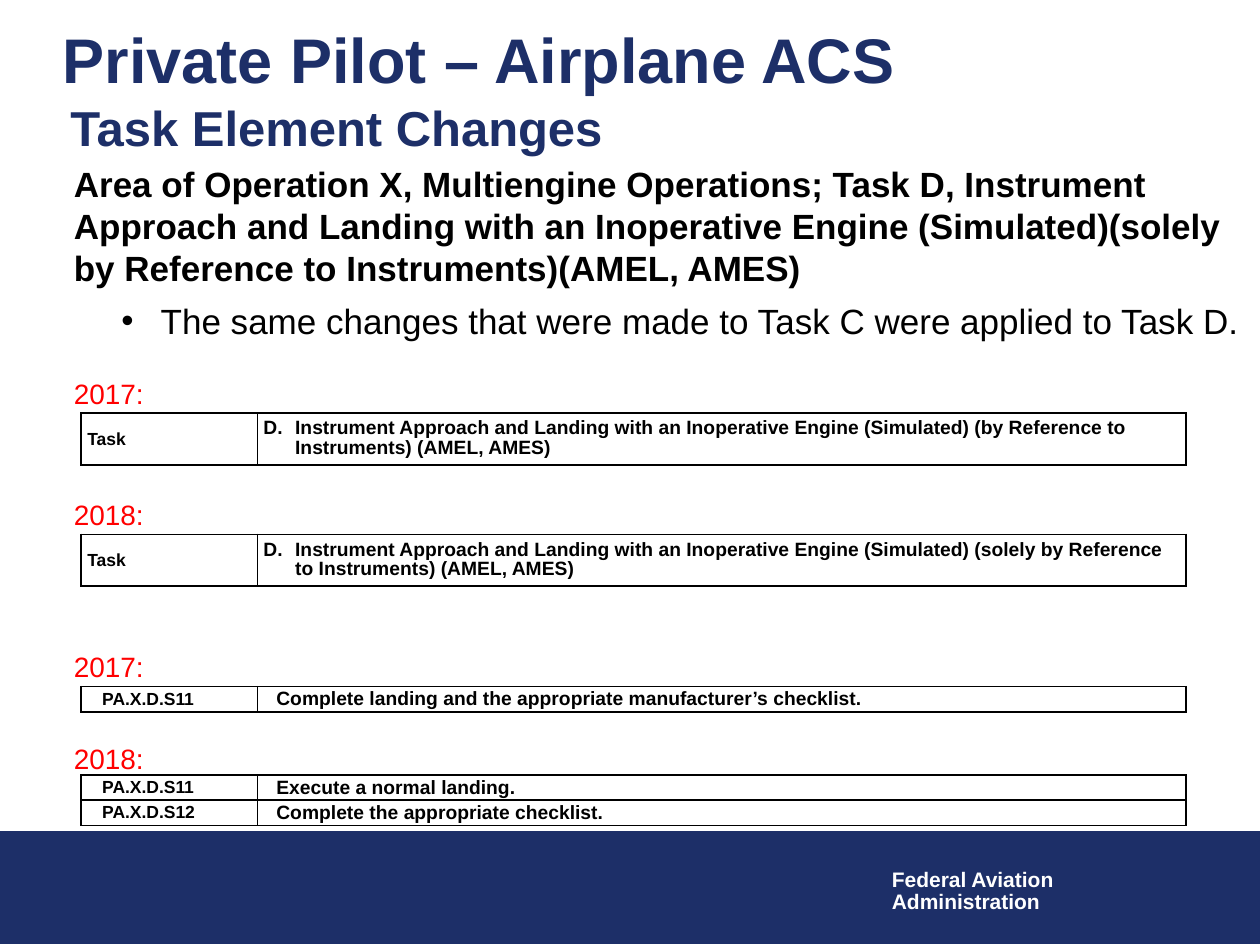
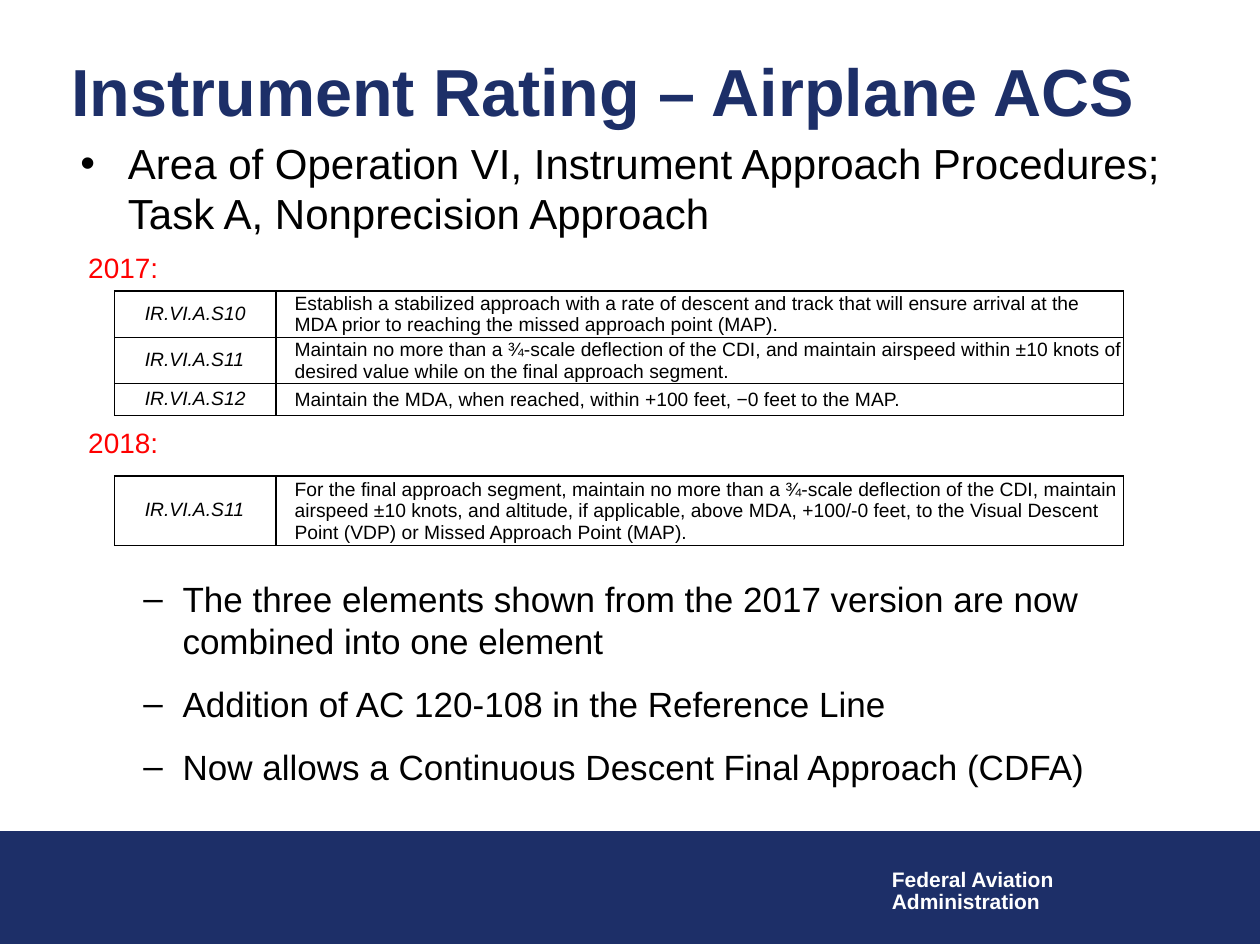
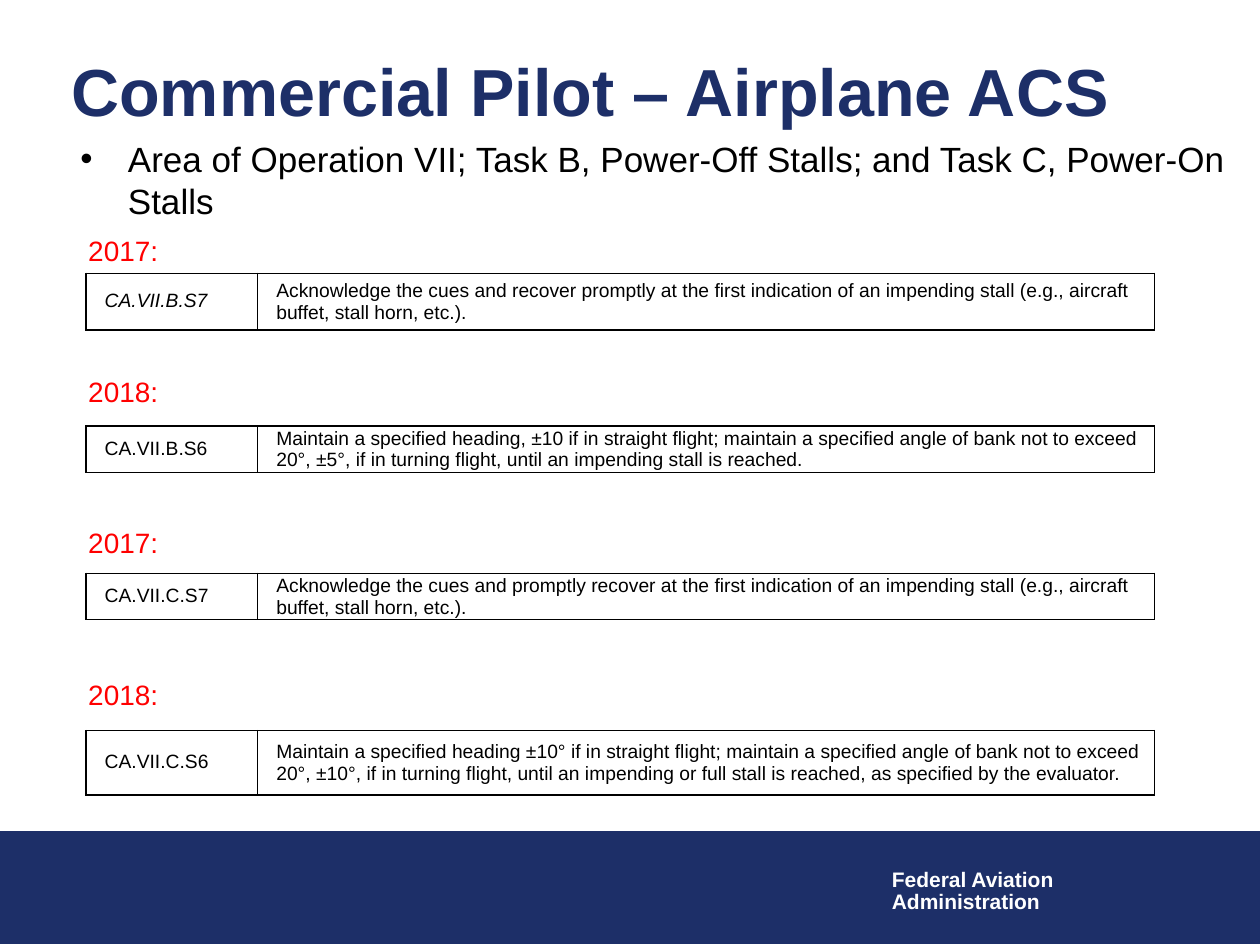
import pptx
import pptx.dml.color
import pptx.enum.shapes
import pptx.enum.text
import pptx.oxml
import pptx.oxml.ns
import pptx.util

Cm = pptx.util.Cm
Pt = pptx.util.Pt
FONT = "Arial"
HUES = {"navy": "1D2F68", "red": "FF0000", "black": "000000", "white": "FFFFFF"}
LEAD = 1.2
INSET = 0.13
NS = pptx.oxml.ns.nsdecls("a")


def color(name):
    return pptx.dml.color.RGBColor.from_string(HUES[name])


def style(para, size, hue="black", bold=False, italic=False):
    for run in para.runs:
        font = run.font
        font.name = FONT
        font.size = Pt(size)
        font.bold = bold
        font.italic = italic
        font.color.rgb = color(hue)


def indent(para, left, first=0):
    props = para._p.get_or_add_pPr()
    props.set("marL", str(Cm(left)))
    props.set("indent", str(Cm(first)))
    return props


def add_text(slide, box, lines, size, hue="black", bold=False, lead=LEAD,
             inset=(0.25, INSET), middle=False, wrap=True):
    shape = slide.shapes.add_textbox(*[Cm(side) for side in box])
    frame = shape.text_frame
    frame.word_wrap = wrap
    frame.margin_left = frame.margin_right = Cm(inset[0])
    frame.margin_top = frame.margin_bottom = Cm(inset[1])
    if middle:
        frame.vertical_anchor = pptx.enum.text.MSO_ANCHOR.MIDDLE
    frame.text = "\n".join(lines)
    for para in frame.paragraphs:
        para.line_spacing = Pt(round(size * lead, 1))
        style(para, size, hue, bold)
    return frame.paragraphs


def add_mark(para, mark, left, hang):
    props = indent(para, left, -hang)
    props.append(pptx.oxml.parse_xml(f'<a:buFont {NS} typeface="{FONT}"/>'))
    props.append(pptx.oxml.parse_xml(f'<a:buChar {NS} char="{mark}"/>'))


def add_frame(deck, title, box, size):
    slide = deck.slides.add_slide(deck.slide_layouts[6])
    band = slide.shapes.add_shape(pptx.enum.shapes.MSO_SHAPE.RECTANGLE,
                                  0, Cm(16.76), deck.slide_width, Cm(2.26))
    band.shadow.inherit = False
    band.fill.solid()
    band.fill.fore_color.rgb = color("navy")
    band.line.color.rgb = color("navy")
    band.line.width = Pt(0.75)
    add_text(slide, (17.73, 17.4, 3.81, 1.12),
             ["Federal Aviation", "Administration"], 12, "white", True,
             lead=1.04, wrap=False)
    add_text(slide, box, [title], size, "navy", True, middle=True)
    return slide


def add_years(slide, left, tops):
    for spot, top in enumerate(tops):
        add_text(slide, (left, top, 2.5, 0.7), [("2017:", "2018:")[spot % 2]],
                 16, "red", inset=(0, 0))


def add_edges(cell):
    props = cell._tc.get_or_add_tcPr()
    for side in "LRTB":
        props.append(pptx.oxml.parse_xml(
            f'<a:ln{side} {NS} w="{Pt(1)}"><a:solidFill>'
            f'<a:srgbClr val="{HUES["black"]}"/></a:solidFill></a:ln{side}>'))


def fill_cell(cell, text):
    add_edges(cell)
    cell.fill.solid()
    cell.fill.fore_color.rgb = color("white")
    cell.margin_left = cell.margin_right = 0
    cell.margin_top = cell.margin_bottom = 0
    cell.vertical_anchor = pptx.enum.text.MSO_ANCHOR.MIDDLE
    cell.text_frame.text = text
    return cell.text_frame.paragraphs[0]


def add_grid(slide, spot, widths, heights, rows, pad=0.38, size=11,
             bold=False, italic=False):
    shape = slide.shapes.add_table(len(rows), 2, Cm(spot[0]), Cm(spot[1]),
                                   Cm(sum(widths)), Cm(sum(heights)))
    grid = shape.table
    grid.first_row = grid.horz_banding = False
    for column, width in zip(grid.columns, widths):
        column.width = Cm(width)
    for index, (row, height) in enumerate(zip(rows, heights)):
        grid.rows[index].height = Cm(height)
        code = fill_cell(grid.cell(index, 0), row[0])
        code.line_spacing = Pt(11.2)
        indent(code, pad)
        style(code, size, bold=bold, italic=italic)
        para = fill_cell(grid.cell(index, 1), row[1])
        if "\t" in row[1]:
            para.line_spacing = Pt(11.3)
            props = indent(para, 0.76, -0.64)
            props.append(pptx.oxml.parse_xml(
                f'<a:tabLst {NS}><a:tab pos="{Cm(0.76)}" algn="l"/></a:tabLst>'))
        else:
            para.space_after = Pt(1)
            indent(para, 0.38)
        style(para, 11, bold=bold)


def add_lead(slide, text, size):
    para = add_text(slide, (1.37, 2.64, 23.83, 2.4), [text], size)[0]
    add_mark(para, "•", 0.96, 0.96)


def add_private(deck):
    slide = add_frame(deck, "Private Pilot – Airplane ACS",
                      (1.02, 0.38, 22.86, 1.6), 36)
    add_text(slide, (1.17, 1.83, 23.42, 1.45), ["Task Element Changes"],
             28, "navy", True)
    head, note = add_text(slide, (1.24, 3.15, 24.13, 4), [
        "Area of Operation X, Multiengine Operations; Task D, Instrument "
        "Approach and Landing with an Inoperative Engine (Simulated)(solely "
        "by Reference to Instruments)(AMEL, AMES)",
        "The same changes that were made to Task C were applied to Task D."], 20)
    style(head, 20, bold=True)
    head.space_after = Pt(6)
    add_mark(note, "•", 1.75, 0.79)
    add_years(slide, 1.49, (7.59, 10.03, 13.1, 14.95))
    widths = (3.56, 18.72)
    task = ("D.\tInstrument Approach and Landing with an Inoperative Engine "
            "(Simulated) ({}by Reference to Instruments) (AMEL, AMES)")
    for top, extra in ((8.33, ""), (10.77, "solely ")):
        add_grid(slide, (1.63, top), widths, [1.04],
                 [("Task", task.format(extra))], 0.13, 10, True)
    for top, rows in (
            (13.84, [("PA.X.D.S11", "Complete landing and the appropriate "
                                    "manufacturer’s checklist.")]),
            (15.62, [("PA.X.D.S11", "Execute a normal landing."),
                     ("PA.X.D.S12", "Complete the appropriate checklist.")])):
        add_grid(slide, (1.63, top), widths, [0.51] * len(rows), rows,
                 0.43, 10, True)


def add_rating(deck):
    slide = add_frame(deck, "Instrument Rating – Airplane ACS",
                      (1.19, 0.97, 23.55, 1.7), 38)
    add_lead(slide, "Area of Operation VI, Instrument Approach Procedures; "
                    "Task A, Nonprecision Approach", 24)
    add_years(slide, 1.78, (5.05, 8.58))
    widths = (3.25, 17.09)
    add_grid(slide, (2.31, 5.87), widths, [0.86, 0.86, 0.64], [
        ("IR.VI.A.S10", "Establish a stabilized approach with a rate of descent "
         "and track that will ensure arrival at the MDA prior to reaching the "
         "missed approach point (MAP)."),
        ("IR.VI.A.S11", "Maintain no more than a ¾-scale deflection of the CDI, "
         "and maintain airspeed within ±10 knots of desired value while on the "
         "final approach segment."),
        ("IR.VI.A.S12", "Maintain the MDA, when reached, within +100 feet, "
         "−0 feet to the MAP.")], 0.61, italic=True)
    add_grid(slide, (2.31, 9.6), widths, [1.3], [
        ("IR.VI.A.S11", "For the final approach segment, maintain no more than "
         "a ¾-scale deflection of the CDI, maintain airspeed ±10 knots, and "
         "altitude, if applicable, above MDA, +100/-0 feet, to the Visual "
         "Descent Point (VDP) or Missed Approach Point (MAP).")],
        0.61, italic=True)
    notes = add_text(slide, (1.37, 11.52, 23.83, 5), [
        "The three elements shown from the 2017 version are now combined into "
        "one element",
        "Addition of AC 120-108 in the Reference Line",
        "Now allows a Continuous Descent Final Approach (CDFA)"], 20)
    for index, para in enumerate(notes):
        if index:
            para.space_before = Pt(12)
        add_mark(para, "–", 2.06, 0.79)


def add_trade(deck):
    slide = add_frame(deck, "Commercial Pilot – Airplane ACS",
                      (1.19, 0.97, 23.55, 1.7), 38)
    add_lead(slide, "Area of Operation VII; Task B, Power-Off Stalls; and "
                    "Task C, Power-On Stalls", 20)
    add_years(slide, 1.78, (4.71, 7.55, 10.6, 13.66))
    for top, height, code, text in (
            (5.51, 1.14, "CA.VII.B.S7",
             "Acknowledge the cues and recover promptly at the first indication "
             "of an impending stall (e.g., aircraft buffet, stall horn, etc.)."),
            (8.59, 0.86, "CA.VII.B.S6",
             "Maintain a specified heading, ±10 if in straight flight; maintain "
             "a specified angle of bank not to exceed 20°, ±5°, if in turning "
             "flight, until an impending stall is reached."),
            (11.56, 0.86, "CA.VII.C.S7",
             "Acknowledge the cues and promptly recover at the first indication "
             "of an impending stall (e.g., aircraft buffet, stall horn, etc.)."),
            (14.73, 1.3, "CA.VII.C.S6",
             "Maintain a specified heading ±10° if in straight flight; maintain "
             "a specified angle of bank not to exceed 20°, ±10°, if in turning "
             "flight, until an impending or full stall is reached, as specified "
             "by the evaluator.")):
        add_grid(slide, (1.73, top), (3.46, 18.08), [height], [(code, text)],
                 italic=code == "CA.VII.B.S7")


def main():
    deck = pptx.Presentation()
    deck.slide_width = Cm(25.4)
    deck.slide_height = Cm(19.05)
    add_private(deck)
    add_rating(deck)
    add_trade(deck)
    deck.save("out.pptx")


if __name__ == "__main__":
    main()
